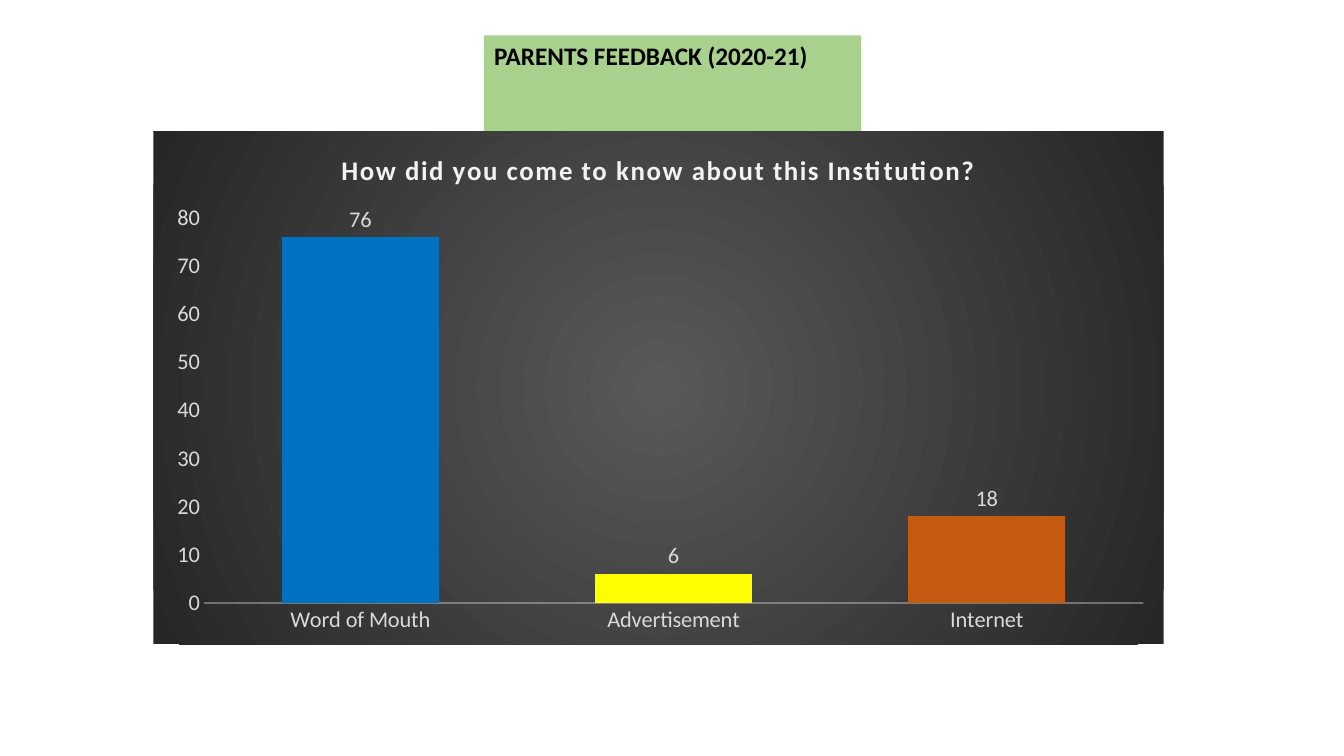
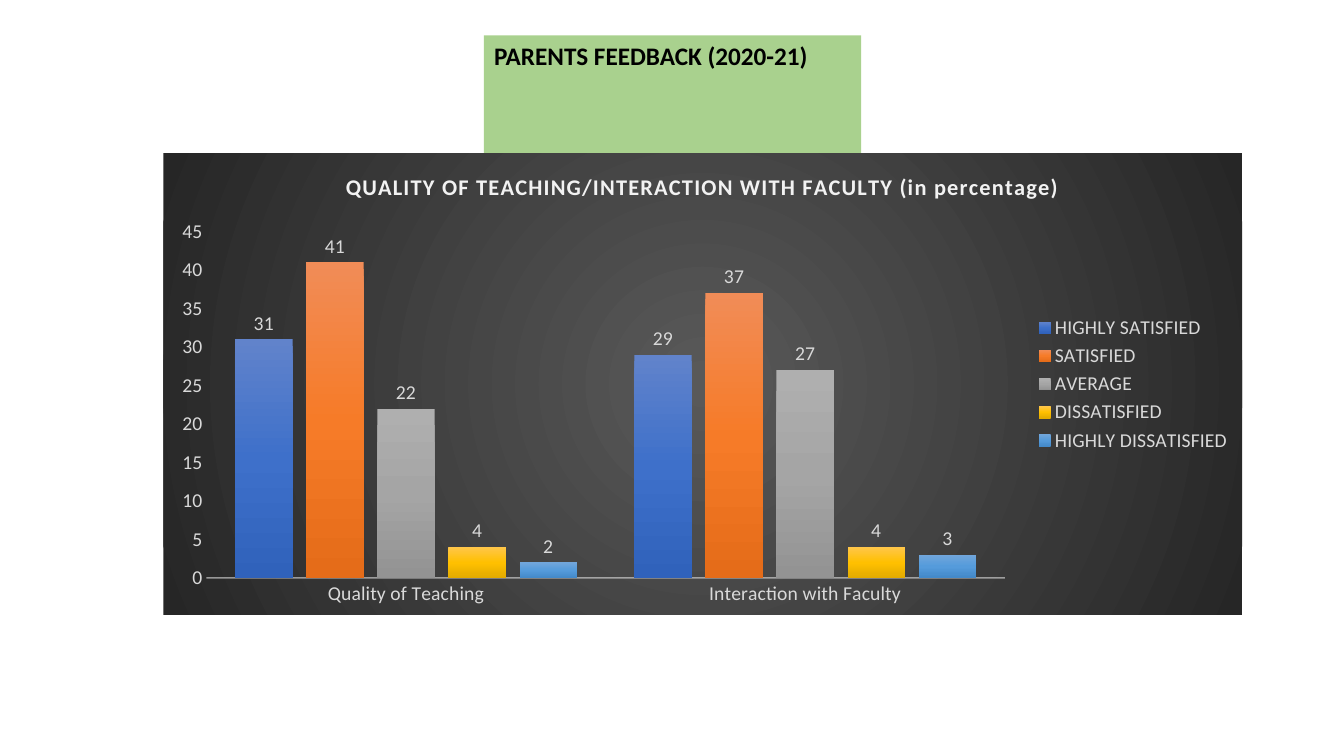
"""Build two slides of parents feedback charts for 2020-21."""
import pptx
import pptx.util
import pptx.chart.data
import pptx.dml.color
import pptx.enum.chart
import pptx.enum.text
import pptx.oxml
import pptx.oxml.ns

Inches = pptx.util.Inches
Pt = pptx.util.Pt
RGBColor = pptx.dml.color.RGBColor
NS = pptx.oxml.ns.nsdecls("a", "c")

FONT = "Calibri"
BLACK = RGBColor(0x00, 0x00, 0x00)
BANNER = RGBColor(0xA9, 0xD1, 0x8E)
LABEL = RGBColor(0xD9, 0xD9, 0xD9)
LIGHT = RGBColor(0xF2, 0xF2, 0xF2)
DARK_GREY = RGBColor(0x26, 0x26, 0x26)
MID_GREY = RGBColor(0x59, 0x59, 0x59)
BLUE = RGBColor(0x00, 0x70, 0xC0)
YELLOW = RGBColor(0xFF, 0xFF, 0x00)
RUST = RGBColor(0xC5, 0x5A, 0x11)
BLUES = [RGBColor(0x61, 0x83, 0xCB), RGBColor(0x3E, 0x70, 0xCA), RGBColor(0x30, 0x62, 0xBB)]
ORANGES = [RGBColor(0xF1, 0x8C, 0x57), RGBColor(0xF6, 0x7B, 0x28), RGBColor(0xE5, 0x6C, 0x19)]
GREYS = [RGBColor(0xAF, 0xAF, 0xAF), RGBColor(0xA5, 0xA5, 0xA5), RGBColor(0x93, 0x93, 0x93)]
GOLDS = [RGBColor(0xFF, 0xC6, 0x4B), RGBColor(0xFF, 0xC0, 0x00), RGBColor(0xE3, 0xAB, 0x00)]
SKIES = [RGBColor(0x71, 0xA6, 0xDB), RGBColor(0x55, 0x9B, 0xDB), RGBColor(0x44, 0x8A, 0xCA)]

LINEAR = '<a:lin ang="5400000" scaled="0"/>'
RADIAL = '<a:path path="circle"><a:fillToRect l="50000" t="50000" r="50000" b="50000"/></a:path>'


def write(tf, text, size=18, color=BLACK, bold=True, align=None):
    p = tf.paragraphs[0]
    p.alignment = align
    r = p.add_run()
    r.text = text
    r.font.name = FONT
    r.font.size = Pt(size)
    r.font.bold = bold
    r.font.color.rgb = color


def gradient_sppr(colors, direction):
    stops = "".join(
        f'<a:gs pos="{i * 100000 // (len(colors) - 1)}"><a:srgbClr val="{c}"/></a:gs>'
        for i, c in enumerate(colors))
    return pptx.oxml.parse_xml(
        f'<c:spPr {NS}><a:gradFill><a:gsLst>{stops}</a:gsLst>{direction}</a:gradFill>'
        '<a:ln><a:noFill/></a:ln></c:spPr>')


SLIDES = [
    dict(title="How did you come to know about this Institution?", title_size=19.2, size=16,
         at=(1.52, 1.3, 10.02, 5.09), plot=(0.05, 0.17, 0.93, 0.75), top=80, step=10,
         cats=["Word of Mouth", "Advertisement", "Internet"],
         series=[("How did you come to know about this Institution?", [76, 6, 18], None)],
         points=[BLUE, YELLOW, RUST]),
    dict(title="QUALITY OF TEACHING/INTERACTION WITH FACULTY (in percentage)", title_size=16, size=14,
         at=(1.62, 1.52, 10.7, 4.58), plot=(0.04, 0.17, 0.74, 0.75), top=45, step=5,
         cats=["Quality of Teaching", "Interaction with Faculty"],
         series=[("HIGHLY SATISFIED", [31, 29], BLUES),
                 ("SATISFIED", [41, 37], ORANGES),
                 ("AVERAGE", [22, 27], GREYS),
                 ("DISSATISFIED", [4, 4], GOLDS),
                 ("HIGHLY DISSATISFIED", [2, 3], SKIES)],
         points=[]),
]

prs = pptx.Presentation()
prs.slide_width = Inches(13.33)
prs.slide_height = Inches(7.5)

for item in SLIDES:
    s = prs.slides.add_slide(prs.slide_layouts[5])
    banner = s.shapes.title
    banner.left, banner.top, banner.width, banner.height = map(Inches, (4.8, 0.35, 3.74, 0.4))
    banner.fill.solid()
    banner.fill.fore_color.rgb = BANNER
    tf = banner.text_frame
    tf.word_wrap = True
    tf.auto_size = pptx.enum.text.MSO_AUTO_SIZE.SHAPE_TO_FIT_TEXT
    tf.vertical_anchor = pptx.enum.text.MSO_ANCHOR.TOP
    write(tf, "PARENTS FEEDBACK (2020-21)", align=pptx.enum.text.PP_ALIGN.LEFT)

    data = pptx.chart.data.CategoryChartData()
    data.categories = item["cats"]
    for name, values, colors in item["series"]:
        data.add_series(name, values)
    chart = s.shapes.add_chart(pptx.enum.chart.XL_CHART_TYPE.COLUMN_CLUSTERED,
                               *map(Inches, item["at"]), data).chart
    chart.font.name = FONT
    chart.font.size = Pt(item["size"])
    chart.font.color.rgb = LABEL
    chart.has_title = True
    write(chart.chart_title.text_frame, item["title"], size=item["title_size"], color=LIGHT)
    for rpr in chart.element.xpath("c:chart/c:title//a:rPr"):
        rpr.set("spc", "100")

    chart.has_legend = len(item["series"]) > 1
    if chart.has_legend:
        chart.legend.position = pptx.enum.chart.XL_LEGEND_POSITION.RIGHT
        chart.legend.include_in_layout = False

    cat_axis, val_axis = chart.category_axis, chart.value_axis
    for axis in (cat_axis, val_axis):
        axis.has_major_gridlines = False
        axis.major_tick_mark = pptx.enum.chart.XL_TICK_MARK.NONE
        axis.minor_tick_mark = pptx.enum.chart.XL_TICK_MARK.NONE
    cat_axis.format.line.width = Pt(1)
    cat_axis.format.line.color.rgb = LIGHT
    for clr in chart.element.xpath(".//c:catAx/c:spPr//a:srgbClr"):
        clr.append(pptx.oxml.parse_xml(f'<a:alpha {NS} val="54000"/>'))
    val_axis.format.line.fill.background()
    val_axis.minimum_scale = 0
    val_axis.maximum_scale = item["top"]
    val_axis.major_unit = item["step"]

    plot = chart.plots[0]
    plot.vary_by_categories = False
    plot.gap_width = 100
    plot.overlap = -24
    plot.has_data_labels = True
    labels = plot.data_labels
    labels.show_value = True
    labels.position = pptx.enum.chart.XL_LABEL_POSITION.OUTSIDE_END
    labels.font.name = FONT
    labels.font.size = Pt(item["size"])
    labels.font.color.rgb = LABEL
    for i, color in enumerate(item["points"]):
        fill = plot.series[0].points[i].format.fill
        fill.solid()
        fill.fore_color.rgb = color
    for ser, (name, values, colors) in zip(chart.element.xpath(".//c:ser"), item["series"]):
        if colors:
            ser.xpath("c:tx")[0].addnext(gradient_sppr(colors, LINEAR))

    chart.element.xpath("c:chart")[0].addnext(gradient_sppr([MID_GREY, DARK_GREY], RADIAL))
    area = chart.element.xpath("c:chart/c:plotArea")[0]
    for layout in area.xpath("c:layout"):
        area.remove(layout)
    spots = "".join(f'<c:{tag} val="{v}"/>' for tag, v in zip("xywh", item["plot"]))
    area.insert(0, pptx.oxml.parse_xml(
        f'<c:layout {NS}><c:manualLayout><c:layoutTarget val="inner"/><c:xMode val="edge"/>'
        f'<c:yMode val="edge"/>{spots}</c:manualLayout></c:layout>'))

prs.save("out.pptx")
